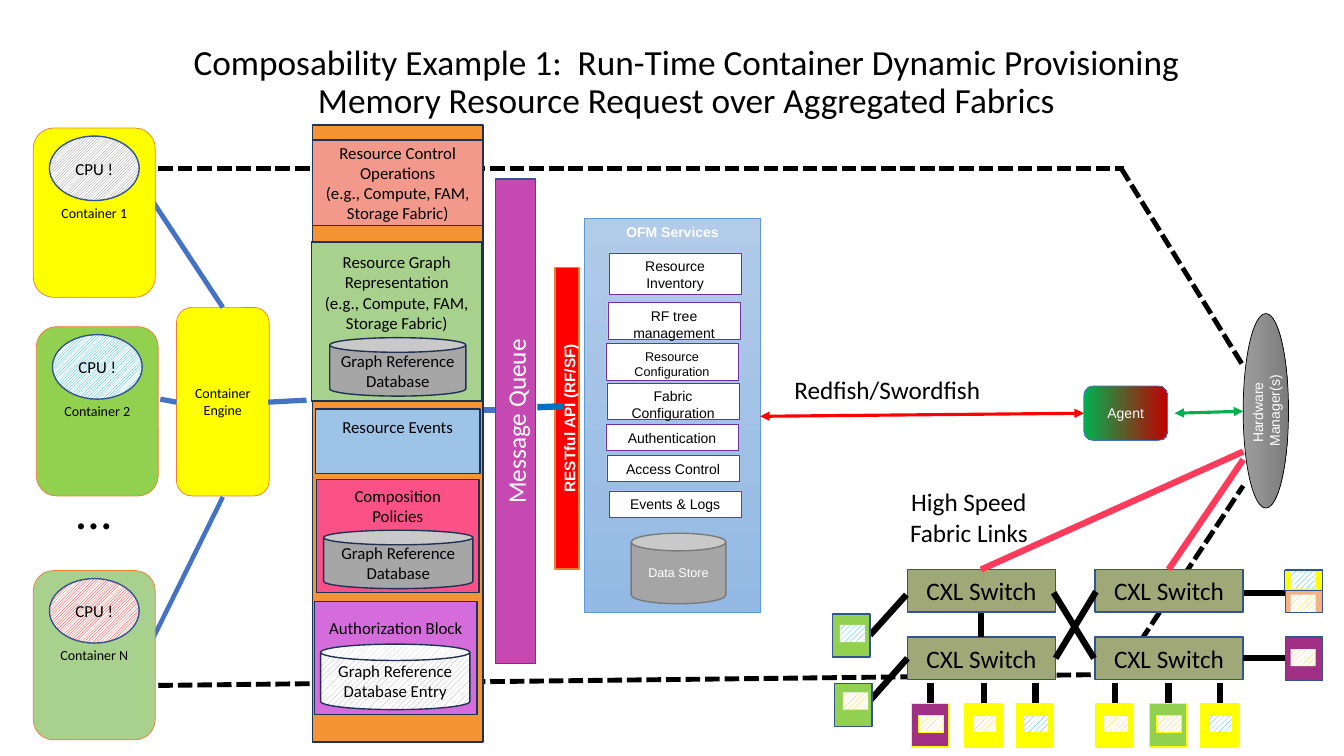
from lxml.etree import SubElement
from pptx import Presentation
from pptx.dml.color import RGBColor
from pptx.enum.dml import MSO_LINE as Dash, MSO_PATTERN as Pattern
from pptx.enum.shapes import MSO_CONNECTOR as Connector, MSO_SHAPE as Shape
from pptx.enum.text import MSO_ANCHOR as Anchor, PP_ALIGN as Align
from pptx.oxml.ns import qn
from pptx.util import Inches, Pt

# The grid has square cells one inch wide: 13.33 columns by 7.5 rows.
COLUMNS, ROWS = 13.33, 7.5
rgb = RGBColor.from_string

deck = Presentation()
deck.slide_width, deck.slide_height = Inches(COLUMNS), Inches(ROWS)
slide = deck.slides.add_slide(deck.slide_layouts[6])


def box(kind, at, fill=None, border=None, text="", size=12, font="Calibri", color="000000",
        weight=1, top=None, hatch=None, fade=None, align=Align.CENTER):
    """Add a shape, or a text box if kind is None; top is the inset of top-anchored text,
    hatch is (pattern, foreground) and fade is (first colour, last colour, angle)."""
    place = [Inches(length) for length in at]
    if kind is None:
        part = slide.shapes.add_textbox(*place)
    else:
        part = slide.shapes.add_shape(kind, *place)
        part.shadow.inherit = False
        if hatch:
            part.fill.patterned()
            part.fill.pattern, part.fill.fore_color.rgb = hatch[0], rgb(hatch[1])
            part.fill.back_color.rgb = rgb("FFFFFF")
        elif fade:
            part.fill.gradient()
            part.fill.gradient_angle = fade[2]
            for stop, shade in zip(part.fill.gradient_stops, fade):
                stop.color.rgb = rgb(shade)
        else:
            part.fill.solid()
            part.fill.fore_color.rgb = rgb(fill)
        if border:
            part.line.color.rgb = rgb(border)
            part.line.width = Pt(weight)
        else:
            part.line.fill.background()
    if text:
        frame = part.text_frame
        frame.word_wrap = True
        frame.text = text
        frame.vertical_anchor = Anchor.MIDDLE if top is None else Anchor.TOP
        if top is not None:
            frame.margin_top = Inches(top)
        for paragraph in frame.paragraphs:
            paragraph.alignment = align
            paragraph.font.size, paragraph.font.name = Pt(size), font
            paragraph.font.color.rgb = rgb(color)
    return part


def link(start, end, color="000000", weight=4.5, dashed=False, arrows=False):
    line = slide.shapes.add_connector(
        Connector.STRAIGHT, *[Inches(length) for length in (*start, *end)])
    line.line.color.rgb = rgb(color)
    line.line.width = Pt(weight)
    if dashed:
        line.line.dash_style = Dash.SQUARE_DOT
    properties = line._element.spPr
    if arrows:
        for tip in ("a:headEnd", "a:tailEnd"):
            SubElement(properties.find(qn("a:ln")), qn(tip), type="triangle")
    SubElement(properties, qn("a:effectLst"))


title = box(None, (0.37, 0.39, 12.88, 0.87), size=25.2,
            text="Composability Example 1:  Run-Time Container Dynamic Provisioning\v"
                 "Memory Resource Request over Aggregated Fabrics")
title.text_frame.paragraphs[0].line_spacing = 0.9

# Containers and their engine
box(Shape.ROUNDED_RECTANGLE, (1.75, 3.05, 0.92, 1.87), "FFFF00", "ED7D31",
    "Container Engine", 10, weight=0.5)
box(None, (0.33, 4.7, 1.2, 0.71), text="…", size=36, top=0.05)
link((1.51, 1.99), (2.21, 3.05), "4472C4", 3.5)
link((1.59, 3.96), (1.75, 3.99), "4472C4", 3.75)
link((1.46, 6.45), (2.21, 4.93), "4472C4", 3.25)
for left, top, number, fill, cpu_color in [
        (0.33, 1.27, "1", "FFFF00", "7C7C7C"),
        (0.36, 3.24, "2", "92D050", "00ADD9"),
        (0.33, 5.66, "N", "A9D18E", "FF0000")]:
    box(Shape.ROUNDED_RECTANGLE, (left, top, 1.21, 1.68), fill, "ED7D31",
        f"Container {number}", 10, weight=0.5)
    box(Shape.OVAL, (left + 0.16, top + 0.08, 0.89, 0.64), border="325491", text="CPU !",
        hatch=(Pattern.LIGHT_UPWARD_DIAGONAL, cpu_color))

# OFM services, agent and hardware manager
services = box(Shape.RECTANGLE, (5.8, 2.17, 1.74, 3.91), None, "5B9BD5", "OFM Services", 10,
               "Arial", "FFFFFF", 0.5, top=0.05, fade=("B1CBE9", "93B9E4", 270))
manager = box(Shape.OVAL, (11.59, 3.85, 1.93, 0.45), None, "000000", "Hardware  Manager(s)", 10,
              "Arial", "FFFFFF", 0.5, fade=("9D9D9D", "7C7C7C", 270))
box(Shape.ROUNDED_RECTANGLE, (10.75, 3.83, 0.83, 0.54), None, "4472C4", "Agent", 10,
    "Arial", "FFFFFF", 0.5, fade=("00B050", "C00000", 0))
api = box(Shape.RECTANGLE, (4.13, 4.03, 2.99, 0.24), "FF0000", "ED7D31", "RESTful API (RF/SF)", 11,
          "Arial", "FFFFFF", top=0.05)
manager.rotation = api.rotation = 270
for heading in (services, api):
    heading.text_frame.paragraphs[0].font.bold = True
link((7.54, 4.13), (10.75, 4.1), "FF0000", 2.25, arrows=True)
link((11.65, 4.1), (12.33, 4.08), "00B050", 2.25, arrows=True)
box(Shape.CAN, (6.26, 5.29, 0.94, 0.7), "A5A5A5", "7A7A7A", "Data Store", 9, "Arial", "FFFFFF")
for left, top, height, service, size in [
        (6.04, 2.51, 0.41, "Resource Inventory", 10),
        (6.03, 3, 0.37, "RF tree management", 10),
        (6.01, 3.41, 0.36, "Resource Configuration", 9),
        (6.02, 3.8, 0.36, "Fabric Configuration", 10),
        (6.01, 4.21, 0.26, "Authentication", 10),
        (6.02, 4.52, 0.26, "Access Control", 10),
        (6.04, 4.87, 0.26, "Events & Logs", 10)]:
    box(Shape.RECTANGLE, (left, top, 1.31, height), "FFFFFF", "7030A0", service, size, "Arial",
        weight=0.5, top=0.05)

for start, end in [((1.57, 1.67), (11.15, 1.67)), ((11.12, 1.67), (12.33, 3.63)),
                   ((1.57, 6.8), (11.15, 6.69)), ((11.1, 6.68), (12.33, 4.82))]:
    link(start, end, weight=3.5, dashed=True)

# Switch fabric
for left in (9, 10.86):
    for top in (5.65, 6.32):
        box(Shape.RECTANGLE, (left, top, 1.47, 0.42), "A1A878", "325491", "CXL Switch", 18)
for start, end in [((9.73, 6.08), (9.73, 6.32)), ((12.33, 6.53), (12.75, 6.53)),
                   ((12.34, 5.88), (12.76, 5.88)), ((8.63, 6.3), (8.99, 5.9)),
                   ((8.62, 6.96), (9, 6.53)), ((10.45, 5.88), (10.85, 6.53)),
                   ((10.87, 5.87), (10.47, 6.53))]:
    link(start, end)
for start, end in [((12.33, 4.48), (9.73, 5.65)), ((12.33, 4.56), (11.59, 5.65))]:
    link(start, end, "FF3A5B")

# Devices, each with a hatched memory chip
AMBER, BLUE = "FFC000", "00B0F0"
devices = [  # left, top, fill, border, chip left, chip top, chip colour, chip border
    (12.75, 5.65, "F4B183", "325491", 12.8, 5.9, AMBER, None),
    (12.75, 6.32, "A12F83", "325491", 12.8, 6.44, AMBER, None),
    (8.26, 6.09, "92D050", "325491", 8.33, 6.2, BLUE, None),
    (8.28, 6.78, "92D050", "325491", 8.36, 6.87, AMBER, None)]
for group_left, fills, chips in [
        (9.04, ("A12F83", "FFFF00", "FFFF00"), (AMBER, AMBER, BLUE)),
        (10.87, ("FFFF00", "92D050", "FFFF00"), (AMBER, AMBER, BLUE))]:
    for offset, fill, chip in zip((0, 0.53, 1.04), fills, chips):
        left = group_left + offset
        devices.append((left, 6.98, fill, "FFFF00", left + 0.07, 7.1, chip, "FFFF00"))
        link((left + 0.19, 6.78), (left + 0.19, 6.97))
for left, top, fill, border, chip_left, chip_top, chip, chip_border in devices:
    box(Shape.RECTANGLE, (left, top, 0.37, 0.43), fill, border)
    box(Shape.RECTANGLE, (chip_left, chip_top, 0.25, 0.17), border=chip_border,
        hatch=(Pattern.WIDE_UPWARD_DIAGONAL, chip))
box(Shape.RECTANGLE, (12.74, 5.66, 0.38, 0.2), "FFFF00", "325491")
box(Shape.RECTANGLE, (12.8, 5.67, 0.25, 0.17), hatch=(Pattern.WIDE_UPWARD_DIAGONAL, BLUE))

box(None, (8.74, 4.78, 1.74, 0.71), text="High Speed Fabric Links", size=18, top=0.05)
box(None, (7.78, 3.66, 3.01, 0.4), text="Redfish/Swordfish", size=18, top=0.05, align=Align.LEFT)

# Message queue and the stack of composition services
link((4.58, 4.07), (4.93, 4.07), "4472C4")
queue = box(Shape.RECTANGLE, (2.71, 3.98, 4.81, 0.4), "C649B1", "325491", "Message Queue", 18,
            color="FFFFFF")
queue.rotation = 270
link((5.33, 4.04), (5.59, 4.03), "0070C0")
link((2.66, 3.99), (3.04, 3.97), "4472C4", 3.75)

NAVY = "1E3256"
EXAMPLES = "(e.g., Compute, FAM, Storage Fabric)"
box(Shape.RECTANGLE, (3.1, 1.24, 1.69, 6.12), "F49432", NAVY)
for at, fill, text, top in [
        ((3.1, 1.39, 1.69, 0.85), "F3998C", f"Resource Control Operations\n{EXAMPLES}", None),
        ((3.13, 4.06, 1.63, 0.64), "9DC3E6", "Resource Events", 0.07),
        ((3.14, 4.76, 1.61, 1.12), "FA5287", "Composition\nPolicies", 0.06),
        ((3.09, 2.4, 1.69, 1.58), "A9D18E", f"Resource Graph Representation\n{EXAMPLES}", 0.1),
        ((3.12, 5.97, 1.61, 1.12), "D46DDB", "Authorization Block", 0.16)]:
    box(Shape.RECTANGLE, at, fill, NAVY, text, top=top)
for at in [(3.27, 3.35, 1.35, 0.58), (3.21, 5.26, 1.48, 0.58)]:
    box(Shape.CAN, at, "A6A6A6", NAVY, "Graph Reference Database")
box(Shape.CAN, (3.18, 6.39, 1.48, 0.65), None, NAVY, "Graph Reference Database Entry",
    hatch=(Pattern.WIDE_UPWARD_DIAGONAL, "A6A6A6"))

deck.save("out.pptx")
